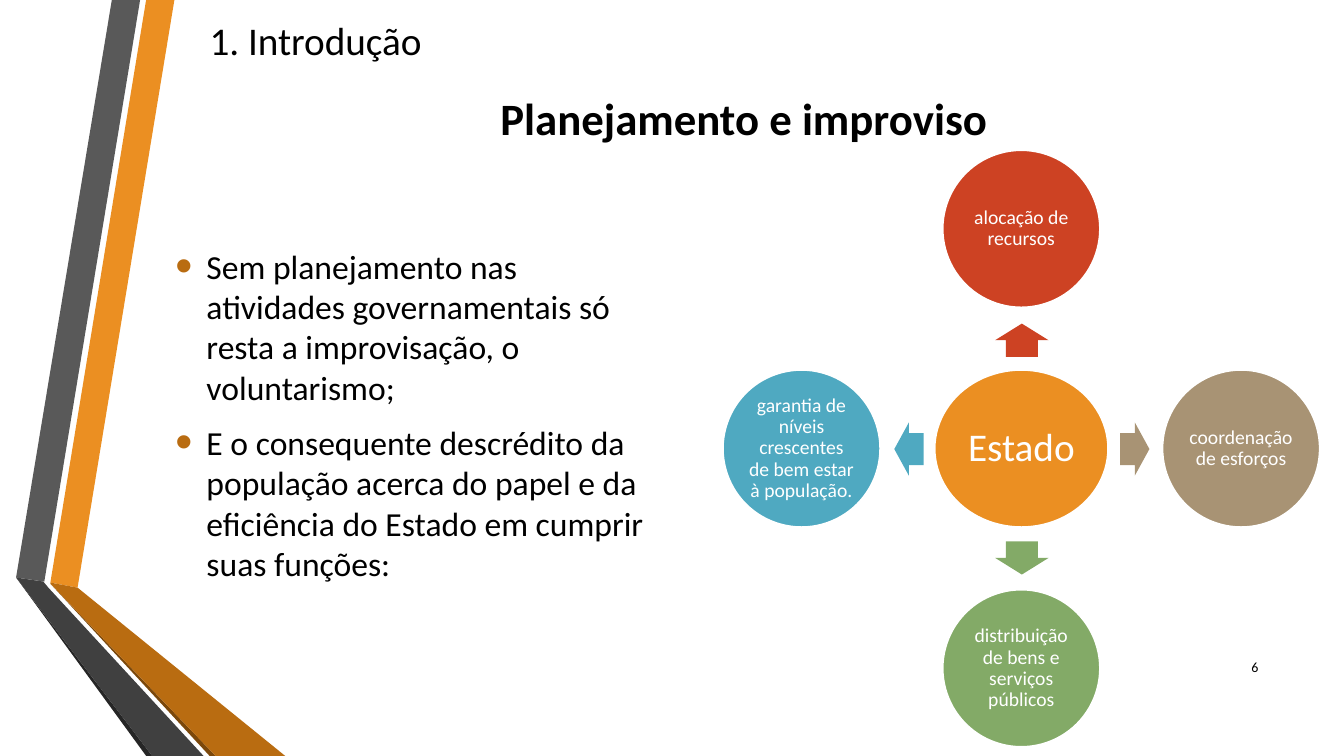
from lxml.etree import SubElement
from pptx import Presentation
from pptx.dml.color import RGBColor
from pptx.enum.shapes import MSO_SHAPE as Preset
from pptx.enum.text import MSO_ANCHOR as Anchor, MSO_AUTO_SIZE as AutoSize, PP_ALIGN as Align
from pptx.oxml.ns import qn
from pptx.util import Emu, Pt

PX = 9144  # 100 px to the inch
BLACK = RGBColor(0x00, 0x00, 0x00)
WHITE = RGBColor(0xFF, 0xFF, 0xFF)
ORANGE = RGBColor(0xEB, 0x8F, 0x22)
DARK_ORANGE = RGBColor(0xB9, 0x6C, 0x11)
BROWN = RGBColor(0x7B, 0x48, 0x0B)
GREY = RGBColor(0x59, 0x59, 0x59)
DARK_GREY = RGBColor(0x40, 0x40, 0x40)
CHARCOAL = RGBColor(0x26, 0x26, 0x26)
RED = RGBColor(0xCD, 0x42, 0x23)
TAN = RGBColor(0xA8, 0x93, 0x74)
GREEN = RGBColor(0x83, 0xAA, 0x67)
BLUE = RGBColor(0x4F, 0xA9, 0xC1)


def px(length):
    return Emu(length * PX)


def write(frame, *texts, size, color=BLACK, bold=False, align=Align.LEFT,
          line_spacing=None, inset=None, font="Calibri"):
    """Fill a text frame with one paragraph per text."""
    frame.word_wrap = True
    frame.auto_size = AutoSize.NONE
    frame.vertical_anchor = Anchor.MIDDLE
    if inset is not None:
        frame.margin_left = frame.margin_right = px(inset)
        frame.margin_top = frame.margin_bottom = px(inset)
    for index, text in enumerate(texts):
        paragraph = frame.add_paragraph() if index else frame.paragraphs[0]
        paragraph.alignment = align
        paragraph.line_spacing = line_spacing
        run = paragraph.add_run()
        run.text = text
        run.font.name, run.font.size, run.font.bold = font, Pt(size), bold
        run.font.color.rgb = color


class SlideBuilder:
    def __init__(self, slide):
        self.slide = slide
        self.shapes = slide.shapes

    def paint(self, shape, fill, line=None):
        shape.shadow.inherit = False
        shape.fill.solid()
        shape.fill.fore_color.rgb = fill
        if line is None:
            shape.line.fill.background()
        else:
            shape.line.color.rgb = line
            shape.line.width = Pt(1.25)

    def title(self, text, left, top, width, height, **style):
        title = self.shapes.title
        title.left, title.top = px(left), px(top)
        title.width, title.height = px(width), px(height)
        write(title.text_frame, text, **style)

    def text(self, left, top, width, height, *texts, **style):
        box = self.shapes.add_textbox(px(left), px(top), px(width), px(height))
        write(box.text_frame, *texts, **style)
        return box

    def bullets(self, left, top, width, height, *texts, **style):
        box = self.text(left, top, width, height, *texts, **style)
        for paragraph in box.text_frame.paragraphs:
            paragraph.space_before, paragraph.space_after = Pt(4.8), Pt(6)
            properties = paragraph._p.get_or_add_pPr()
            properties.set("marL", str(px(31)))
            properties.set("indent", str(px(-31)))
            color = SubElement(properties, qn("a:buClr"))
            SubElement(color, qn("a:srgbClr"), val=str(DARK_ORANGE))
            SubElement(properties, qn("a:buSzPct"), val="145000")
            SubElement(properties, qn("a:buFont"), typeface="Arial")
            SubElement(properties, qn("a:buChar"), char="•")

    def ribbon(self, fill, start, *points):
        builder = self.shapes.build_freeform(*start, scale=PX)
        builder.add_line_segments(points, close=True)
        self.paint(builder.convert_to_shape(), fill)

    def circle(self, center_x, center_y, width, height, fill, text, **style):
        shape = self.shapes.add_shape(Preset.OVAL, px(center_x - width // 2),
                                      px(center_y - height // 2), px(width), px(height))
        self.paint(shape, fill, WHITE)
        write(shape.text_frame, text, color=WHITE, align=Align.CENTER,
              line_spacing=0.9, **style)

    def arrow(self, center_x, center_y, length, fill, rotation):
        breadth = 53
        shape = self.shapes.add_shape(Preset.RIGHT_ARROW, px(center_x - length // 2),
                                      px(center_y - breadth // 2), px(length), px(breadth))
        shape.adjustments[0], shape.adjustments[1] = 0.6, 0.5
        shape.rotation = rotation
        self.paint(shape, fill)


def main():
    presentation = Presentation()
    presentation.slide_width, presentation.slide_height = px(1333), px(750)
    builder = SlideBuilder(presentation.slides.add_slide(presentation.slide_layouts[5]))

    # Folded ribbons on the left edge
    builder.ribbon(ORANGE, (50, 578), (77, 583), (173, 0), (145, 0))
    builder.ribbon(GREY, (139, 0), (111, 0), (16, 573), (44, 577))
    builder.ribbon(CHARCOAL, (16, 573), (145, 750), (151, 750))
    builder.ribbon(BROWN, (50, 579), (208, 750), (214, 750))
    builder.ribbon(DARK_ORANGE, (50, 578), (50, 579), (214, 750), (283, 750), (77, 583))
    builder.ribbon(DARK_GREY, (202, 750), (48, 583), (43, 577), (16, 573), (151, 750))

    # Headings and body
    builder.text(198, -7, 277, 94, "1. Introdução", size=28)
    builder.title("Planejamento e improviso", 405, 76, 666, 81,
                  size=32, bold=True, align=Align.CENTER)
    builder.bullets(
        164, 240, 503, 342,
        "Sem planejamento nas atividades governamentais só resta a improvisação, o voluntarismo;",
        "E o consequente descrédito da população acerca do papel e da eficiência do Estado "
        "em cumprir suas funções:",
        size=24)

    # State at the hub, its functions around it
    hub_x, hub_y, orbit, diameter = 1013, 445, 218, 156
    builder.circle(hub_x, hub_y, 172, diameter, ORANGE, "Estado", size=28, inset=4)
    functions = [
        (0, -1, 270, RED, "alocação de recursos"),
        (1, 0, 0, TAN, "coordenação de esforços"),
        (0, 1, 90, GREEN, "distribuição de bens e serviços públicos"),
        (-1, 0, 180, BLUE, "garantia de níveis crescentes de bem estar à população."),
    ]
    for step_x, step_y, rotation, color, label in functions:
        distance, length = (112, 29) if step_x else (108, 33)
        builder.arrow(hub_x + step_x * distance, hub_y + step_y * distance,
                      length, color, rotation)
        builder.circle(hub_x + step_x * orbit, hub_y + step_y * orbit,
                       diameter, diameter, color, label, size=14, inset=2)

    # Page number
    builder.text(1198, 642, 60, 40, "6", size=10, align=Align.RIGHT)

    presentation.save("out.pptx")


if __name__ == "__main__":
    main()
